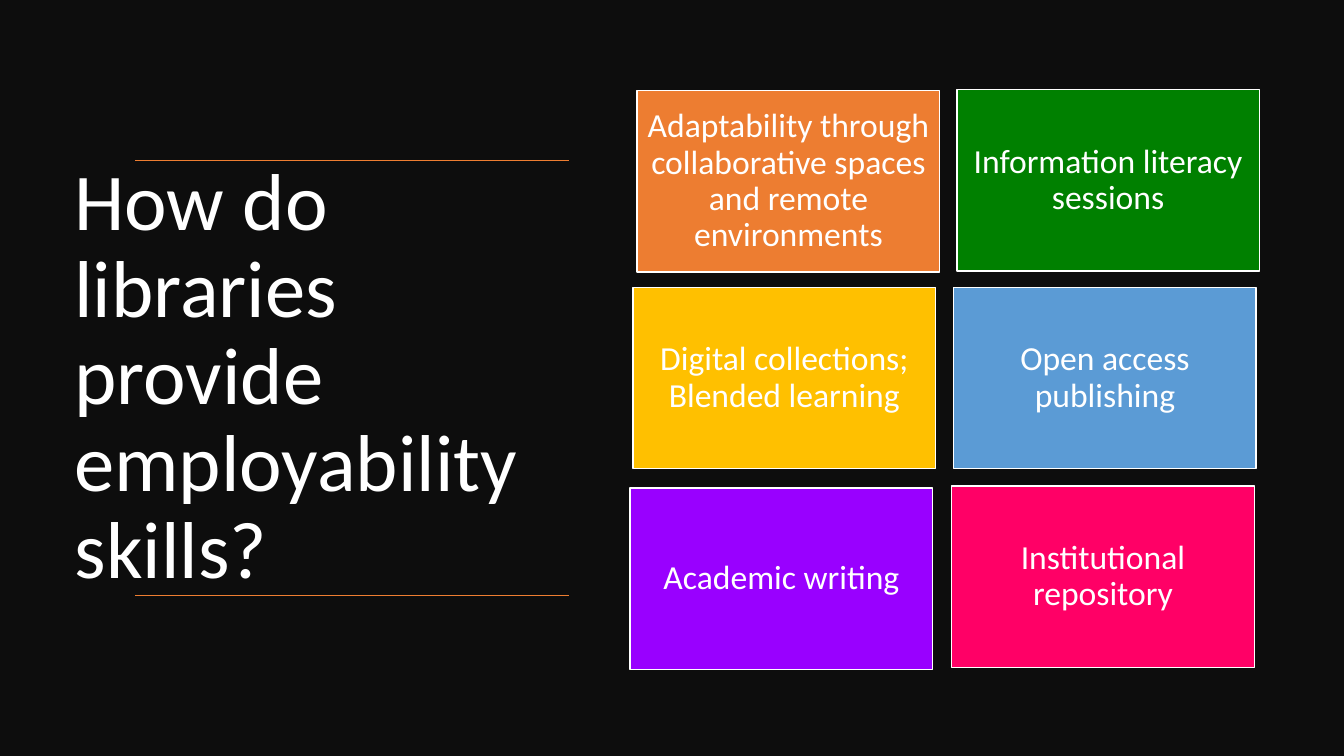
import pptx
import pptx.util
import pptx.dml.color
import pptx.enum.shapes
import pptx.enum.text
import pptx.oxml.ns
import lxml.etree

EMU_PER_PX = 9144  # 100 px to the inch
COLORS = {
    "night": "0D0D0D", "white": "FFFFFF", "orange": "ED7D31",
    "green": "008000", "gold": "FFC000", "blue": "5B9BD5",
    "violet": "9900FF", "pink": "FF0066",
}
CARD_SIZE = (300, 180)
CARDS = [
    (632, 90, "orange", "Adaptability through collaborative spaces and remote environments"),
    (949, 89, "green", "Information literacy sessions"),
    (628, 285, "gold", "Digital collections; Blended learning"),
    (946, 285, "blue", "Open access publishing"),
    (625, 484, "violet", "Academic writing"),
    (944, 482, "pink", "Institutional repository"),
]


def px(length):
    return pptx.util.Emu(length * EMU_PER_PX)


def color(name):
    return pptx.dml.color.RGBColor.from_string(COLORS[name])


class SlideBuilder:
    font = "Calibri"
    text_color = "white"
    line_width = pptx.util.Pt(1)

    def __init__(self, page):
        self.page = page

    def add_words(self, shape, text, size, align, margins):
        frame = shape.text_frame
        sides = ("margin_left", "margin_top", "margin_right", "margin_bottom")
        frame_format = dict(zip(sides, map(px, margins)))
        frame_format["word_wrap"] = True
        frame_format["vertical_anchor"] = pptx.enum.text.MSO_ANCHOR.MIDDLE
        para = frame.paragraphs[0]
        span = para.add_run()
        span.text = text
        span.font.color.rgb = color(self.text_color)
        formats = [
            (frame, frame_format),
            (para, {"alignment": align, "line_spacing": 0.9}),
            (span.font, {"name": self.font, "size": pptx.util.Pt(size)}),
        ]
        for target, values in formats:
            for name, value in values.items():
                setattr(target, name, value)

    def rectangle(self, left, top, width, height, fill, outline=None):
        shape = self.page.shapes.add_shape(
            pptx.enum.shapes.MSO_SHAPE.RECTANGLE,
            px(left), px(top), px(width), px(height))
        shape.shadow.inherit = False
        shape.fill.solid()
        shape.fill.fore_color.rgb = color(fill)
        if outline:
            shape.line.color.rgb = color(outline)
            shape.line.width = self.line_width
        else:
            shape.line.fill.background()
        return shape

    def card(self, left, top, fill, text):
        shape = self.rectangle(left, top, *CARD_SIZE, fill, "white")
        self.add_words(shape, text, 24, pptx.enum.text.PP_ALIGN.CENTER, (10, 10, 10, 10))

    def title(self, left, top, width, height, text):
        box = self.page.shapes.add_textbox(px(left), px(top), px(width), px(height))
        self.add_words(box, text, 57.6, pptx.enum.text.PP_ALIGN.LEFT, (10, 5, 25, 5))

    def rule(self, left, right, top):
        line = self.page.shapes.add_connector(
            pptx.enum.shapes.MSO_CONNECTOR.STRAIGHT,
            px(left), px(top), px(right), px(top))
        line.line.color.rgb = color("orange")
        line.line.width = self.line_width
        properties = line.element.find(pptx.oxml.ns.qn("p:spPr"))
        lxml.etree.SubElement(properties, pptx.oxml.ns.qn("a:effectLst"))


def main():
    deck = pptx.Presentation()
    deck.slide_width, deck.slide_height = px(1333), px(750)
    builder = SlideBuilder(deck.slides.add_slide(deck.slide_layouts[6]))

    # Dark backdrop
    builder.rectangle(0, 0, 1333, 750, "night")

    # Title between two rules
    builder.title(64, 159, 539, 433, "How do libraries provide employability skills?")
    for top in (159, 591):
        builder.rule(134, 564, top)

    # Cards
    for card in CARDS:
        builder.card(*card)

    deck.save("out.pptx")


if __name__ == "__main__":
    main()
